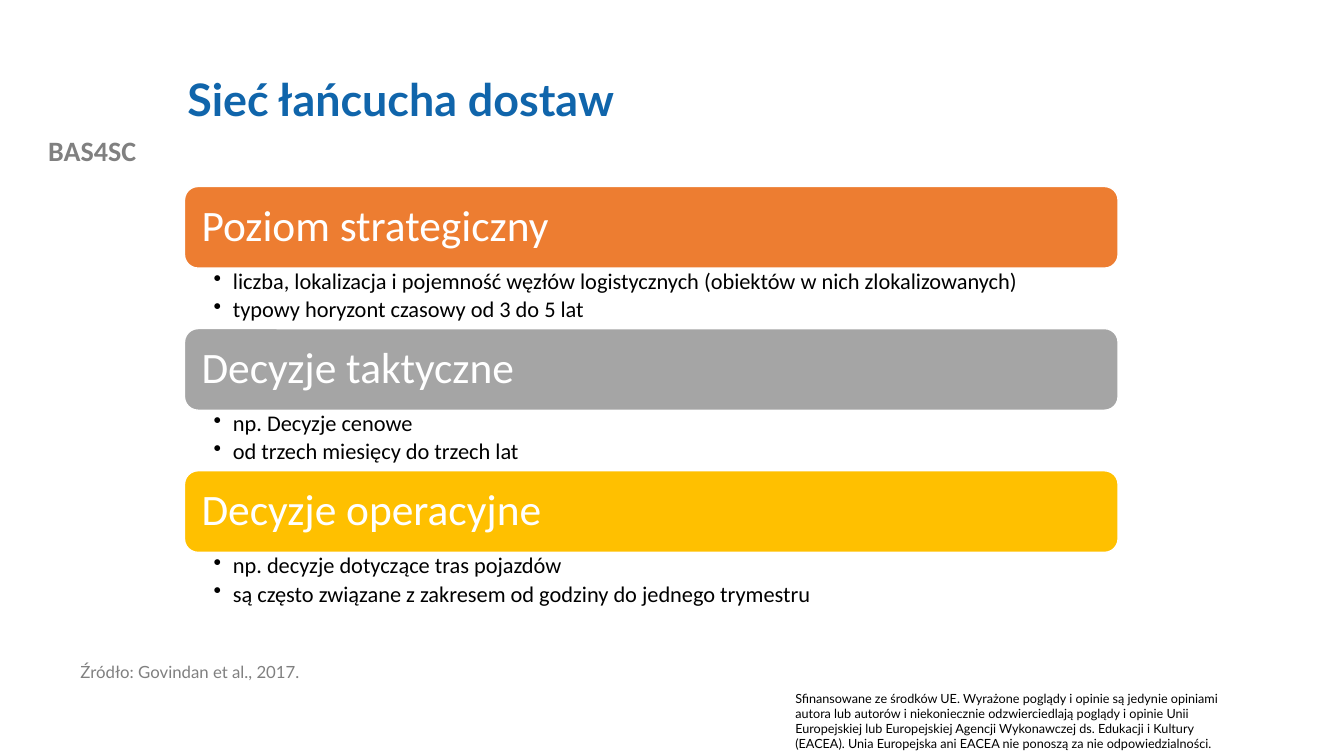
from lxml import etree
from pptx import Presentation
from pptx.dml.color import RGBColor
from pptx.enum.shapes import MSO_SHAPE
from pptx.enum.text import MSO_ANCHOR, PP_ALIGN
from pptx.oxml.ns import qn
from pptx.util import Pt

PX = 9144  # 100 px to the inch
ROUNDED = MSO_SHAPE.ROUNDED_RECTANGLE
TOP, MIDDLE = MSO_ANCHOR.TOP, MSO_ANCHOR.MIDDLE
LEFT, CENTER = PP_ALIGN.LEFT, PP_ALIGN.CENTER

BLUE = RGBColor(0x10, 0x65, 0xAB)
ORANGE = RGBColor(0xED, 0x7D, 0x31)
SILVER = RGBColor(0xA5, 0xA5, 0xA5)
GOLD = RGBColor(0xFF, 0xC0, 0x00)
GRAY = RGBColor(0x80, 0x80, 0x80)
BLACK = RGBColor(0x00, 0x00, 0x00)
WHITE = RGBColor(0xFF, 0xFF, 0xFF)

LEVELS = [
    ("Poziom strategiczny", ORANGE,
     ["liczba, lokalizacja i pojemność węzłów logistycznych (obiektów w nich zlokalizowanych)",
      "typowy horyzont czasowy od 3 do 5 lat"]),
    ("Decyzje taktyczne", SILVER,
     ["np. Decyzje cenowe", "od trzech miesięcy do trzech lat"]),
    ("Decyzje operacyjne", GOLD,
     ["np. decyzje dotyczące tras pojazdów",
      "są często związane z zakresem od godziny do jednego trymestru"]),
]
LEVEL_X, LEVEL_Y, LEVEL_W = 183, 185, 926
BAR_H, LIST_H = 81, 60

DISCLAIMER = (
    "Sfinansowane ze środków UE. Wyrażone poglądy i opinie są jedynie opiniami autora "
    "lub autorów i niekoniecznie odzwierciedlają poglądy i opinie Unii Europejskiej lub "
    "Europejskiej Agencji Wykonawczej ds. Edukacji i Kultury (EACEA). Unia Europejska "
    "ani EACEA nie ponoszą za nie odpowiedzialności.")


def write(sp, lines, font, size, color, bold=False, align=LEFT, anchor=TOP,
          insets=(10, 5, 10, 5), spacing=1.0, bullet=False):
    """Fill a shape with one paragraph per line; insets are left, top, right, bottom."""
    tf = sp.text_frame
    tf.word_wrap = True
    tf.vertical_anchor = anchor
    for side, inset in zip(("left", "top", "right", "bottom"), insets):
        setattr(tf, f"margin_{side}", inset * PX)
    for i, line in enumerate(lines):
        p = tf.add_paragraph() if i else tf.paragraphs[0]
        p.alignment = align
        p.line_spacing = spacing
        if bullet:
            p.space_after = Pt(3)
            pPr = p._p.get_or_add_pPr()
            pPr.set("marL", str(19 * PX))
            pPr.set("indent", str(-19 * PX))
            etree.SubElement(pPr, qn("a:buChar")).set("char", "•")
        r = p.add_run()
        r.text = line
        for name, value in {"name": font, "size": Pt(size), "bold": bold}.items():
            setattr(r.font, name, value)
        r.font.color.rgb = color


def add_box(x, y, w, h):
    return s.shapes.add_textbox(x * PX, y * PX, w * PX, h * PX)


prs = Presentation()
prs.slide_width, prs.slide_height = 1333 * PX, 750 * PX
s = prs.slides.add_slide(prs.slide_layouts[6])

write(add_box(0, 128, 183, 44), ["BAS4SC"], "Calibri", 20, GRAY, bold=True, align=CENTER)
write(add_box(779, 680, 463, 71), [DISCLAIMER], "Lato", 9, BLACK)
write(add_box(70, 652, 667, 30), ["Źródło: Govindan et al., 2017."], "Lato", 12, GRAY)

for i, (heading, color, points) in enumerate(LEVELS):
    y = LEVEL_Y + i * (BAR_H + LIST_H)
    bar = s.shapes.add_shape(ROUNDED, LEVEL_X * PX, y * PX, LEVEL_W * PX, BAR_H * PX)
    bar.shadow.inherit = False
    bar.fill.solid()
    bar.fill.fore_color.rgb = color
    bar.line.color.rgb = WHITE
    bar.line.width = Pt(1)
    write(bar, [heading], "Calibri", 31, WHITE, anchor=MIDDLE,
          insets=(13, 13, 13, 13), spacing=0.9)
    write(add_box(LEVEL_X, y + BAR_H, LEVEL_W, LIST_H), points, "Calibri", 16, BLACK,
          insets=(29, 2, 12, 2), spacing=0.9, bullet=True)

write(add_box(176, 40, 1066, 122), ["Sieć łańcucha dostaw"], "Lato", 32, BLUE,
      bold=True, anchor=MIDDLE, spacing=0.9)

prs.save("out.pptx")
